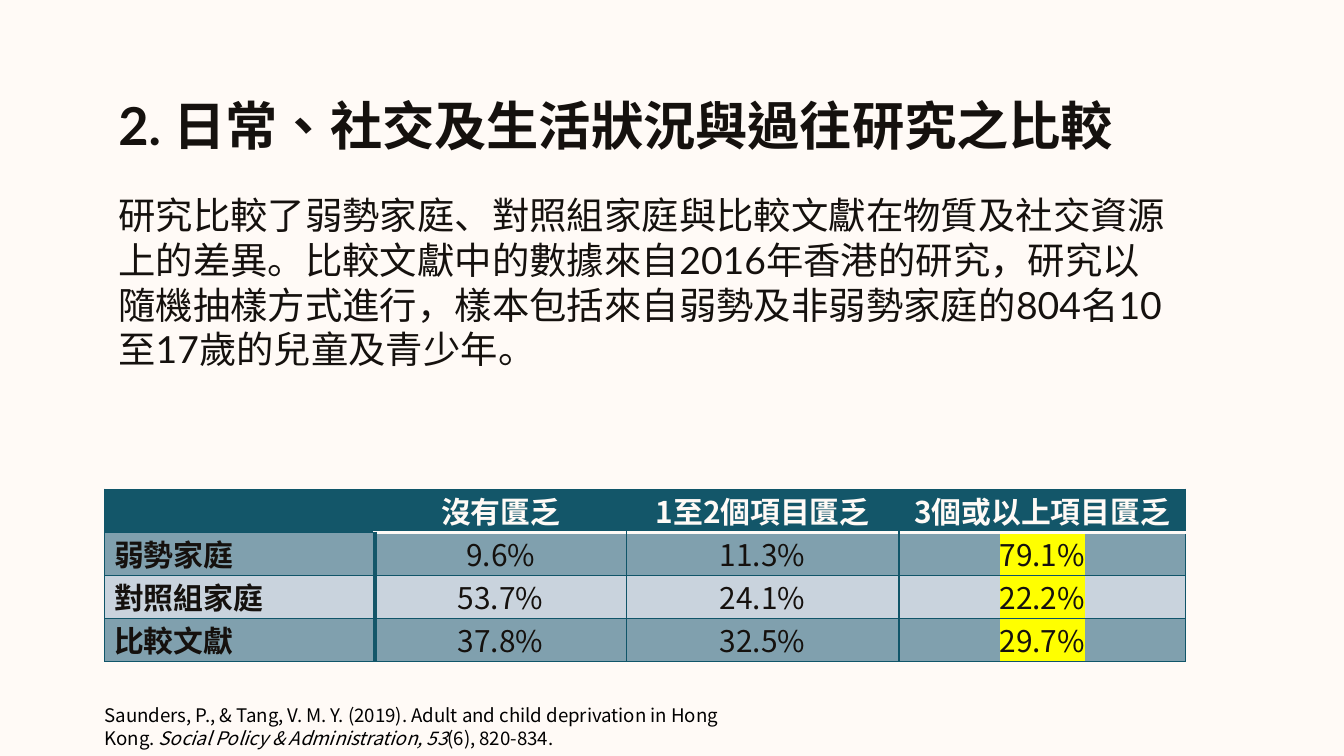
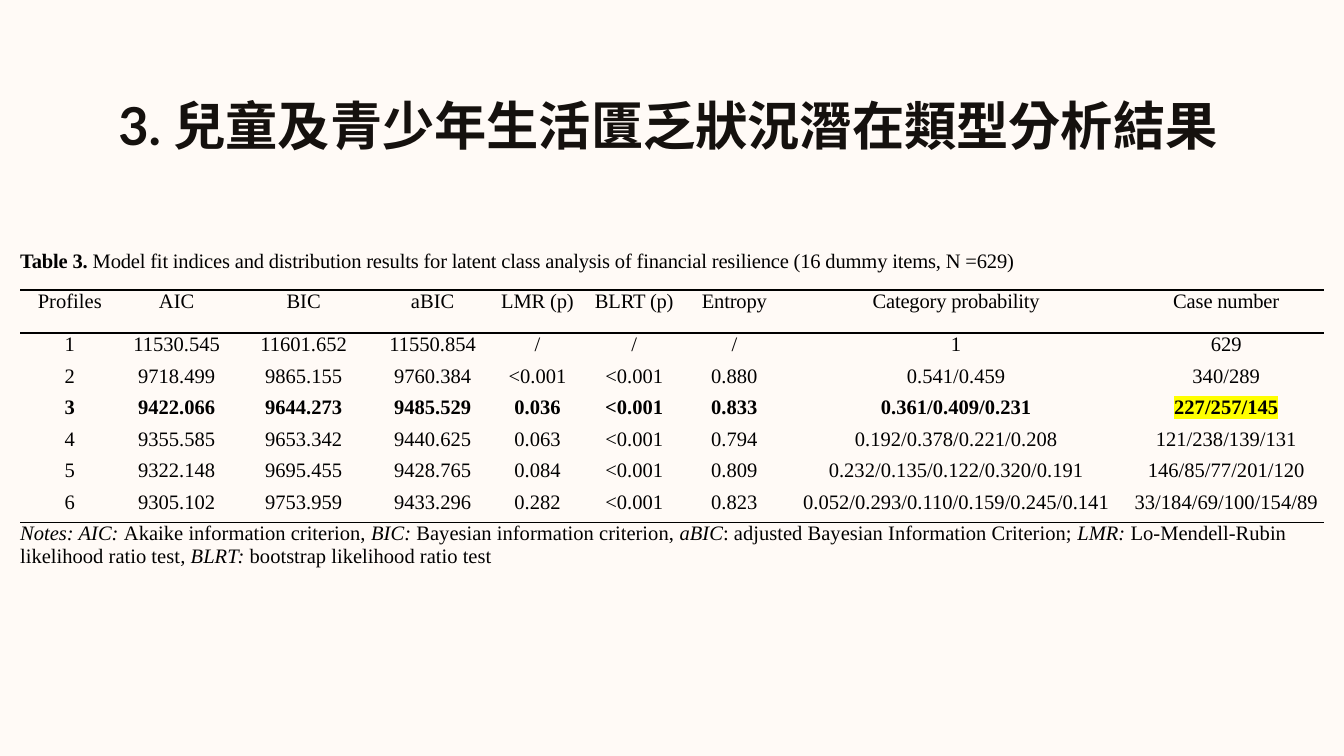
from dataclasses import dataclass
from lxml.etree import SubElement
from pptx import Presentation
from pptx.dml.color import RGBColor as RGB
from pptx.enum.text import MSO_ANCHOR as ANC, MSO_AUTO_SIZE as AUTO, PP_ALIGN as AL
from pptx.oxml import parse_xml
from pptx.oxml.ns import nsdecls, qn
from pptx.util import Inches, Pt


@dataclass(frozen=True)
class Theme:
    back: str = "FFFAF6"
    ink: str = "15110E"
    black: str = "000000"
    teal: str = "135669"
    line: str = "105569"
    dark: str = "80A0AE"
    pale: str = "C9D3DD"
    mark: str = "FFFF00"
    # font and size of each kind of text
    title: tuple = ("Lato", 28)
    body: tuple = ("Lato", 20)
    cell: tuple = ("Noto Sans CJK SC", 16)
    cite: tuple = ("Noto Sans CJK SC", 10)
    stat: tuple = ("Times New Roman", 11)
    plain: str = "{2D5ABB26-0587-4C30-8999-92F81FD0307C}"


T = Theme()


def put(para, text, kind, color, bold=False, ital=False, mark=False, tight=False):
    """Add one run to a paragraph."""
    run = para.add_run()
    run.text = text
    font = run.font
    font.size, font.bold, font.italic = Pt(kind[1]), bold, ital
    font.color.rgb = RGB.from_string(color)
    props = run._r.get_or_add_rPr()
    if kind == T.title:
        props.set("lang", "zh-TW")
    if tight:
        props.set("spc", "-10")
    if mark:
        tint = SubElement(props, qn("a:highlight"))
        SubElement(tint, qn("a:srgbClr")).set("val", T.mark)
    font.name = kind[0]
    SubElement(props, qn("a:ea")).set("typeface", kind[0])


def style(cell, pad, fill, edges):
    """Set margins, fill and borders; edges maps L, R, T, B to (colour, points)."""
    cell.margin_left = cell.margin_right = Inches(pad)
    cell.margin_top = cell.margin_bottom = 0
    cell.vertical_anchor = ANC.TOP
    if fill:
        cell.fill.solid()
        cell.fill.fore_color.rgb = RGB.from_string(fill)
    else:
        cell.fill.background()
    props = cell._tc.get_or_add_tcPr()
    for pos, side in enumerate("LRTB"):
        color, width = edges.get(side, (None, 0))
        paint = (f'<a:solidFill><a:srgbClr val="{color}"/></a:solidFill>'
                 if color else "<a:noFill/>")
        props.insert(pos, parse_xml(
            f'<a:ln{side} {nsdecls("a")} w="{Pt(width)}">{paint}</a:ln{side}>'))


prs = Presentation()
prs.slide_width = Inches(10)
prs.slide_height = prs.slide_width * 9 // 16
fill = prs.slide_master.background.fill
fill.solid()
fill.fore_color.rgb = RGB.from_string(T.back)

# Slides, titles and body text
heads = [
    (1, "2. 日常、社交及生活狀況與過往研究之比較"),
    (5, "3. 兒童及青少年生活匱乏狀況潛在類型分析結果"),
]
intro = ("研究比較了弱勢家庭、對照組家庭與比較文獻在物質及社交資源上的差異。"
         "比較文獻中的數據來自2016年香港的研究，研究以隨機抽樣方式進行，"
         "樣本包括來自弱勢及非弱勢家庭的804名10至17歲的兒童及青少年。")
slides, boxes = [], []
for lay, text in heads:
    slide = prs.slides.add_slide(prs.slide_layouts[lay])
    slides.append(slide)
    boxes.append((slide.shapes.title, (0.78, 0.59, 8.44, 0.6), text, T.title, True))
boxes.append((slides[0].placeholders[1], (0.78, 1.33, 8.05, 2.22), intro, T.body, False))

for box, spot, text, kind, bold in boxes:
    box.left, box.top, box.width, box.height = map(Inches, spot)
    frame = box.text_frame
    frame.word_wrap, frame.auto_size = True, AUTO.NONE
    frame.vertical_anchor = ANC.TOP
    frame.margin_left = frame.margin_right = Inches(0.1)
    frame.margin_top = frame.margin_bottom = Inches(0.1)
    para = frame.paragraphs[0]
    para.alignment, para.space_before = AL.LEFT, Pt(0)
    props = para._p.get_or_add_pPr()
    props.set("marL", "0")
    props.set("indent", "0")
    SubElement(props, qn("a:buNone"))
    put(para, text, kind, T.ink, bold)

# Empty tables
plans = [
    (slides[0], 0.78, 3.64, [2.01, 1.87, 2.03, 2.13], [0.26] + [0.22] * 3),
    (slides[1], 0.15, 1.86, [0.74, 0.85, 1.04, 0.88, 0.68, 0.76, 0.73, 2.57, 1.45],
     [0.3, 0.32] + [1.41 / 6] * 6 + [0.44]),
]
tables = []
for slide, left, top, cols, rows in plans:
    shape = slide.shapes.add_table(len(rows), len(cols), Inches(left), Inches(top),
                                   Inches(sum(cols)), Inches(sum(rows)))
    table = shape.table
    table.first_row = table.horz_banding = False
    table._tbl.tblPr.find(qn("a:tableStyleId")).text = T.plain
    for col, width in zip(table.columns, cols):
        col.width = Inches(width)
    for row, height in zip(table.rows, rows):
        row.height = Inches(height)
    tables.append(table)

# Deprivation table
needs = [
    ["", "沒有匱乏", "1至2個項目匱乏", "3個或以上項目匱乏"],
    ["弱勢家庭", "9.6%", "11.3%", "79.1%"],
    ["對照組家庭", "53.7%", "24.1%", "22.2%"],
    ["比較文獻", "37.8%", "32.5%", "29.7%"],
]
thin, thick, white = (T.line, 0.75), (T.teal, 2), (T.back, 2)
for r, row in enumerate(needs):
    for c, text in enumerate(row):
        cell = tables[0].cell(r, c)
        if r == 0:
            edges = {"T": thin, "B": white if c else thin}
            if c in (0, 3):
                edges["R" if c else "L"] = thin
            shade = T.teal
        else:
            edges = dict.fromkeys("LRTB", thin)
            if c < 2:
                edges["L" if c else "R"] = thick
            if r == 1 and c:
                edges["T"] = white
            shade = T.dark if r % 2 else T.pale
        style(cell, 0.07, shade, edges)
        para = cell.text_frame.paragraphs[0]
        para.alignment = AL.CENTER if c or r == 0 else AL.JUSTIFY
        if text:
            put(para, text, T.cell, T.ink if r else T.back,
                bold=r == 0 or c == 0, mark=r > 0 and c == 3)
        else:
            para.font.size = Pt(T.cell[1])

# Citation
note = slides[0].shapes.add_textbox(Inches(0.68), Inches(5.19), Inches(5), Inches(0.44))
note.text_frame.word_wrap = True
note.text_frame.auto_size = AUTO.SHAPE_TO_FIT_TEXT
for text, ital in [
    ("Saunders, P., & Tang, V. M. Y. (2019). Adult and child deprivation in Hong Kong. ", False),
    ("Social Policy & Administration, 53", True),
    ("(6), 820-834.", False),
]:
    put(note.text_frame.paragraphs[0], text, T.cite, T.black, ital=ital)

# Model fit table
fits = [
    ["Profiles", "AIC", "BIC", "aBIC", "LMR (p)", "BLRT (p)", "Entropy",
     "Category probability", "Case number"],
    ["1", "11530.545", "11601.652", "11550.854", "/", "/", "/", "1", "629"],
    ["2", "9718.499", "9865.155", "9760.384", "<0.001", "<0.001", "0.880",
     "0.541/0.459", "340/289"],
    ["3", "9422.066", "9644.273", "9485.529", "0.036", "<0.001", "0.833",
     "0.361/0.409/0.231", "227/257/145"],
    ["4", "9355.585", "9653.342", "9440.625", "0.063", "<0.001", "0.794",
     "0.192/0.378/0.221/0.208", "121/238/139/131"],
    ["5", "9322.148", "9695.455", "9428.765", "0.084", "<0.001", "0.809",
     "0.232/0.135/0.122/0.320/0.191", "146/85/77/201/120"],
    ["6", "9305.102", "9753.959", "9433.296", "0.282", "<0.001", "0.823",
     "0.052/0.293/0.110/0.159/0.245/0.141", "33/184/69/100/154/89"],
]
table, rule = tables[1], (T.black, 1)
last = len(table.rows) - 1
for r in range(last + 1):
    edges = {}
    if r in (1, 2, last):
        edges["T"] = rule
    if r in (0, 1, last - 1):
        edges["B"] = rule
    for c in range(len(table.columns)):
        cell = table.cell(r, c)
        style(cell, 0, None, edges)
        if 0 < r < last:
            para = cell.text_frame.paragraphs[0]
            para.alignment = AL.CENTER
            best = fits[r - 1][0] == "3"
            put(para, fits[r - 1][c], T.stat, T.black, bold=best,
                mark=best and c == 8, tight=r == 1 and c > 3)

# Caption and notes across the model fit table: text, bold, italic
wide = {
    0: [("Table 3. ", True, False),
        ("Model fit indices and distribution results for latent class analysis of "
         "financial resilience (16 dummy items, N =629)", False, False)],
    last: [("Notes: AIC: ", False, True),
           ("Akaike information criterion, ", False, False),
           ("BIC:", False, True),
           (" Bayesian information criterion, ", False, False),
           ("aBIC", False, True),
           (": adjusted Bayesian Information Criterion; ", False, False),
           ("LMR: ", False, True),
           ("Lo-Mendell-Rubin likelihood ratio test", False, False),
           (", BLRT: ", False, True),
           ("bootstrap likelihood ratio test", False, False)],
}
for r, runs in wide.items():
    cell = table.cell(r, 0)
    cell.merge(table.cell(r, len(table.columns) - 1))
    for text, bold, ital in runs:
        put(cell.text_frame.paragraphs[0], text, T.stat, T.black, bold, ital,
            tight=r == 0)

prs.save("out.pptx")
